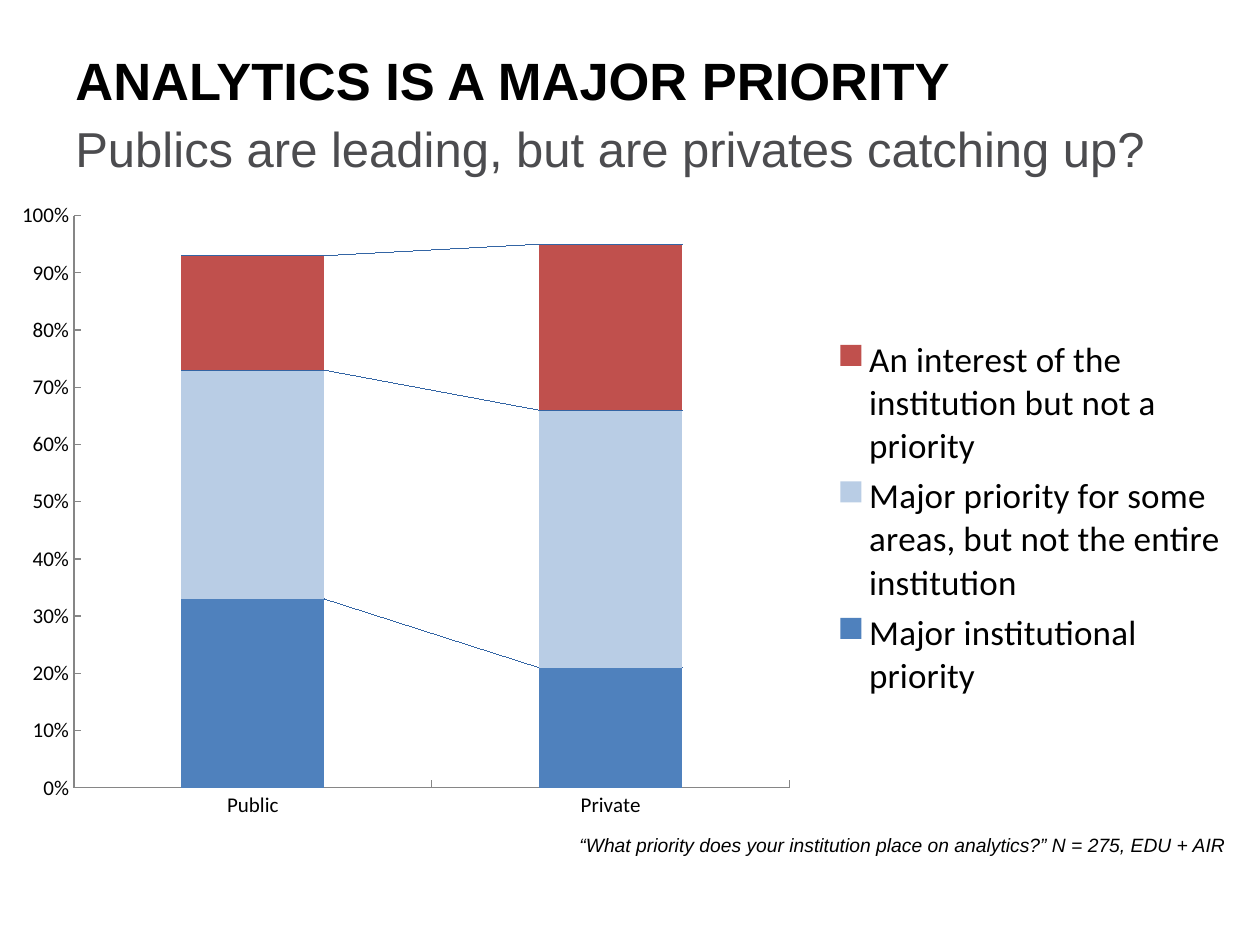
from lxml.etree import SubElement
from pptx import Presentation
from pptx.chart.data import CategoryChartData
from pptx.dml.color import RGBColor
from pptx.enum.chart import XL_CHART_TYPE as ChartType
from pptx.enum.chart import XL_LEGEND_POSITION as LegendPos
from pptx.enum.chart import XL_TICK_MARK as Tick
from pptx.enum.text import MSO_ANCHOR as Anchor
from pptx.oxml import parse_xml
from pptx.oxml.ns import nsdecls, qn
from pptx.util import Emu, Pt

PX = 914400 // 126
SERIES = [
    ("Major institutional priority", (0.33, 0.21), "4F81BD"),
    ("Major priority for some areas, but not the entire institution",
     (0.4, 0.45), "B9CDE5"),
    ("An interest of the institution but not a priority",
     (0.2, 0.29), "C0504D"),
]


def px(n):
    return Emu(n * PX)


def rgb(value):
    return RGBColor.from_string(value)


def set_font(font, name, size, color="000000"):
    font.name, font.size = name, Pt(size)
    font.color.rgb = rgb(color)


def add_text(s, box, text, size, color="000000", anchor=Anchor.TOP,
             bold=False, italic=False, wrap=True, fill=None):
    sp = s.shapes.add_textbox(*map(px, box))
    if fill:
        sp.fill.solid()
        sp.fill.fore_color.rgb = rgb(fill)
    tf = sp.text_frame
    tf.word_wrap = wrap
    tf.vertical_anchor = anchor
    p = tf.paragraphs[0]
    p.text = text
    set_font(p.font, "Arial", size, color)
    p.font.bold, p.font.italic = bold, italic


def place(parent, box, inner=False):
    for old in parent.findall(qn("c:layout")):
        parent.remove(old)
    layout = parse_xml(f"<c:layout {nsdecls('c')}/>")
    manual = SubElement(layout, qn("c:manualLayout"))
    items = [("xMode", "edge"), ("yMode", "edge"), *zip("xywh", box)]
    if inner:
        items.insert(0, ("layoutTarget", "inner"))
    for tag, value in items:
        SubElement(manual, qn(f"c:{tag}")).set("val", str(value))
    return layout


def style_axis(axis):
    axis.has_major_gridlines = False
    axis.major_tick_mark = Tick.INSIDE
    axis.minor_tick_mark = Tick.NONE
    axis.format.line.color.rgb = rgb("868686")
    set_font(axis.tick_labels.font, "Calibri", 12)


def add_series_lines(plot, color):
    lines = parse_xml(
        f"<c:serLines {nsdecls('c', 'a')}><c:spPr><a:ln w='9525'><a:solidFill>"
        f"<a:srgbClr val='{color}'/></a:solidFill></a:ln></c:spPr></c:serLines>")
    plot._element.find(qn("c:overlap")).addnext(lines)


def add_legend(chart):
    chart.has_legend = True
    legend = chart.legend
    legend.position = LegendPos.RIGHT
    legend.include_in_layout = False
    set_font(legend.font, "Calibri", 20)
    element = legend._element
    layout = place(element, (0.67, 0.22, 0.33, 0.58))
    element.find(qn("c:legendPos")).addnext(layout)


def add_priority_chart(s, box):
    data = CategoryChartData(number_format="0%")
    data.categories = ["Public", "Private"]
    for name, values, _ in SERIES:
        data.add_series(name, values)
    chart = s.shapes.add_chart(ChartType.COLUMN_STACKED, *map(px, box), data).chart
    set_font(chart.font, "Calibri", 18)
    chart.has_title = False

    plot = chart.plots[0]
    plot.gap_width, plot.overlap = 150, 100
    plot.vary_by_categories = False
    for series, (_, _, color) in zip(plot.series, SERIES):
        series.format.fill.solid()
        series.format.fill.fore_color.rgb = rgb(color)
    add_series_lines(plot, "3A6EA8")

    style_axis(chart.category_axis)
    axis = chart.value_axis
    style_axis(axis)
    axis.minimum_scale, axis.maximum_scale, axis.major_unit = 0, 1, 0.1
    axis.tick_labels.number_format = "0%"
    axis.tick_labels.number_format_is_linked = False

    area = plot._element.getparent()
    area.insert(0, place(area, (0.06, 0.04, 0.58, 0.89), inner=True))
    add_legend(chart)


def main():
    prs = Presentation()
    prs.slide_width, prs.slide_height = px(1260), px(945)
    s = prs.slides.add_slide(prs.slide_layouts[6])
    add_text(s, (63, 0, 1155, 158), "ANALYTICS IS A MAJOR PRIORITY", 30,
             anchor=Anchor.MIDDLE, bold=True)
    add_priority_chart(s, (0, 190, 1234, 643))
    add_text(s, (63, 112, 1155, 160),
             "Publics are leading, but are privates catching up?", 28, "4C4C4F")
    add_text(s, (567, 827, 675, 36),
             "“What priority does your institution place on analytics?” "
             "N = 275, EDU + AIR", 11, italic=True, wrap=False, fill="FFFFFF")
    prs.save("out.pptx")


if __name__ == "__main__":
    main()
